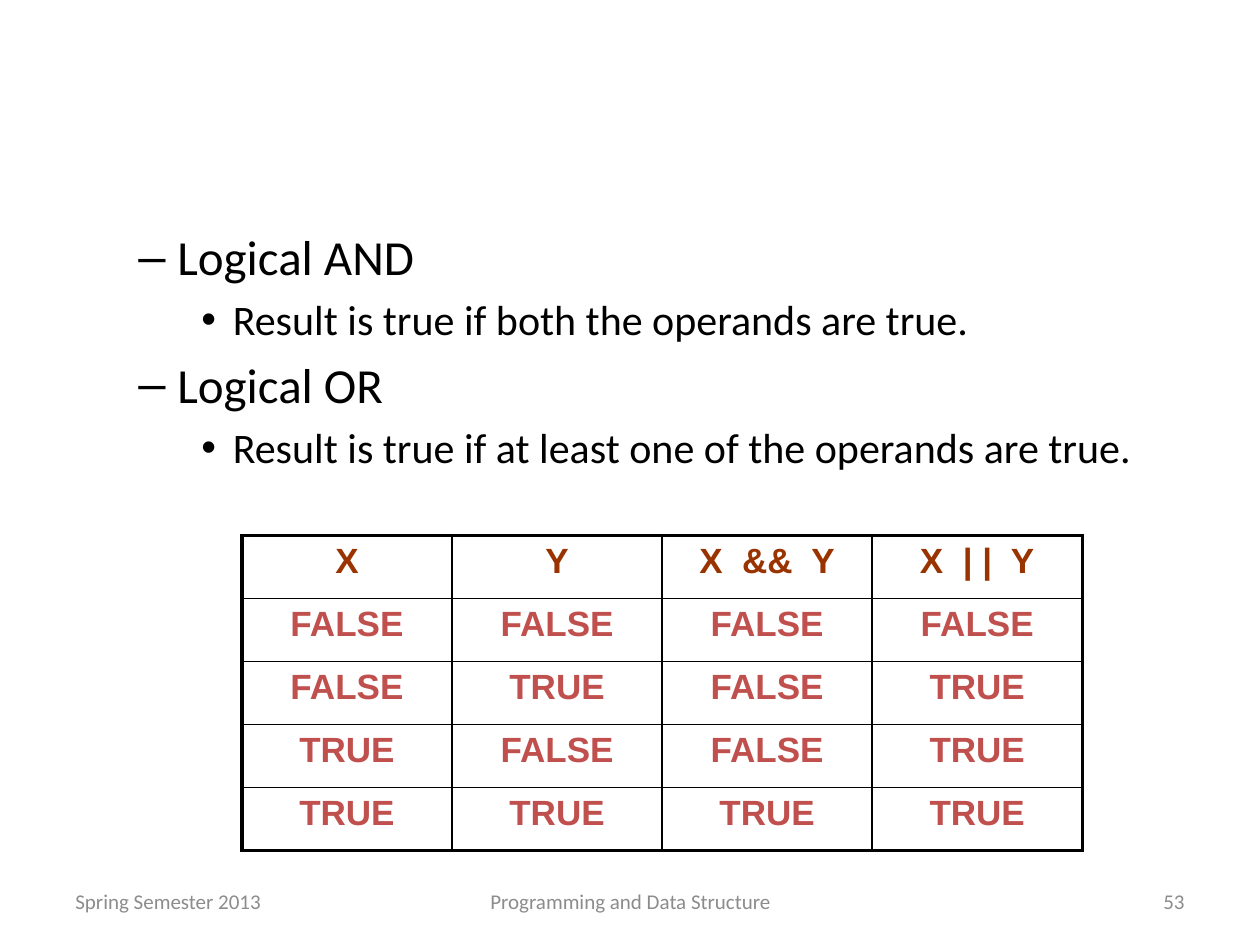
from lxml import etree
from pptx import Presentation
from pptx.dml.color import RGBColor
from pptx.enum.text import MSO_ANCHOR, PP_ALIGN
from pptx.oxml.ns import qn
from pptx.util import Inches, Pt

LEFT, CENTER, RIGHT = PP_ALIGN.LEFT, PP_ALIGN.CENTER, PP_ALIGN.RIGHT
TOP, MIDDLE = MSO_ANCHOR.TOP, MSO_ANCHOR.MIDDLE

COLORS = {
    "text": "000000",
    "footer": "8C8C8C",
    "heading": "993300",
    "value": "C0504D",
    "border": "000000",
}
OUTER_BORDER, INNER_BORDER = 2.25, 1

LEVELS = {
    1: {"margin": 0.81, "indent": -0.31, "bullet": "–", "size": 28},
    2: {"margin": 1.25, "indent": -0.25, "bullet": "•", "size": 24},
}
OPERATORS = [
    (1, "Logical AND"),
    (2, "Result is true if both the operands are true."),
    (1, "Logical OR"),
    (2, "Result is true if at least one of the operands are true."),
]
TRUTH_TABLE = [
    ("X", "Y", "X  &&  Y", "X  | |  Y"),
    ("FALSE", "FALSE", "FALSE", "FALSE"),
    ("FALSE", "TRUE", "FALSE", "TRUE"),
    ("TRUE", "FALSE", "FALSE", "TRUE"),
    ("TRUE", "TRUE", "TRUE", "TRUE"),
]
FOOTERS = [
    (0.5, 2.33, LEFT, "Spring Semester 2013"),
    (3.42, 3.17, CENTER, "Programming and Data Structure"),
    (7.17, 2.33, RIGHT, "53"),
]


def add_run(paragraph, text, size, color, font="Calibri", bold=False):
    run = paragraph.add_run()
    run.text = text
    run.font.size = Pt(size)
    run.font.name = font
    run.font.bold = bold
    run.font.color.rgb = RGBColor.from_string(COLORS[color])


def space_before(paragraph, percent):
    properties = paragraph._p.get_or_add_pPr()
    spacing = etree.SubElement(properties, qn("a:spcBef"))
    etree.SubElement(spacing, qn("a:spcPct"), val=str(percent * 1000))


def add_bullet(paragraph, level):
    properties = paragraph._p.get_or_add_pPr()
    properties.set("marL", str(Inches(level["margin"])))
    properties.set("indent", str(Inches(level["indent"])))
    etree.SubElement(properties, qn("a:buFont"), typeface="Arial")
    etree.SubElement(properties, qn("a:buChar"), char=level["bullet"])


def add_text_frame(slide, left, top, width, height, anchor):
    box = slide.shapes.add_textbox(
        Inches(left), Inches(top), Inches(width), Inches(height))
    frame = box.text_frame
    frame.word_wrap = True
    frame.vertical_anchor = anchor
    return frame


def add_outline(slide, items):
    frame = add_text_frame(slide, 0.5, 1.75, 9, 4.95, TOP)
    for index, (depth, text) in enumerate(items):
        paragraph = frame.add_paragraph() if index else frame.paragraphs[0]
        paragraph.level = depth
        space_before(paragraph, 20)
        add_bullet(paragraph, LEVELS[depth])
        add_run(paragraph, text, LEVELS[depth]["size"], "text")


def add_footer(slide, left, width, alignment, text):
    paragraph = add_text_frame(slide, left, 6.95, width, 0.4, MIDDLE).paragraphs[0]
    paragraph.alignment = alignment
    add_run(paragraph, text, 12, "footer")


def set_borders(cell, outer_sides):
    properties = cell._tc.get_or_add_tcPr()
    for side, is_outer in outer_sides.items():
        width = Pt(OUTER_BORDER if is_outer else INNER_BORDER)
        line = etree.SubElement(properties, qn(f"a:ln{side}"), w=str(width))
        fill = etree.SubElement(line, qn("a:solidFill"))
        etree.SubElement(fill, qn("a:srgbClr"), val=COLORS["border"])


def add_truth_table(slide, rows):
    row_count, column_count = len(rows), len(rows[0])
    table = slide.shapes.add_table(
        row_count, column_count,
        Inches(1.92), Inches(4.25), Inches(6.67), Inches(2.5)).table
    table.first_row = False
    table.horz_banding = False
    for r, values in enumerate(rows):
        for c, value in enumerate(values):
            cell = table.cell(r, c)
            paragraph = cell.text_frame.paragraphs[0]
            paragraph.alignment = CENTER
            space_before(paragraph, 20)
            color = "value" if r else "heading"
            add_run(paragraph, value, 20, color, "Arial", True)
            set_borders(cell, {
                "L": c == 0,
                "R": c == column_count - 1,
                "T": r == 0,
                "B": r == row_count - 1,
            })
            cell.fill.background()


def main():
    presentation = Presentation()
    presentation.slide_width = Inches(10)
    presentation.slide_height = Inches(7.5)
    slide = presentation.slides.add_slide(presentation.slide_layouts[6])
    add_outline(slide, OPERATORS)
    for footer in FOOTERS:
        add_footer(slide, *footer)
    add_truth_table(slide, TRUTH_TABLE)
    presentation.save("out.pptx")


if __name__ == "__main__":
    main()
